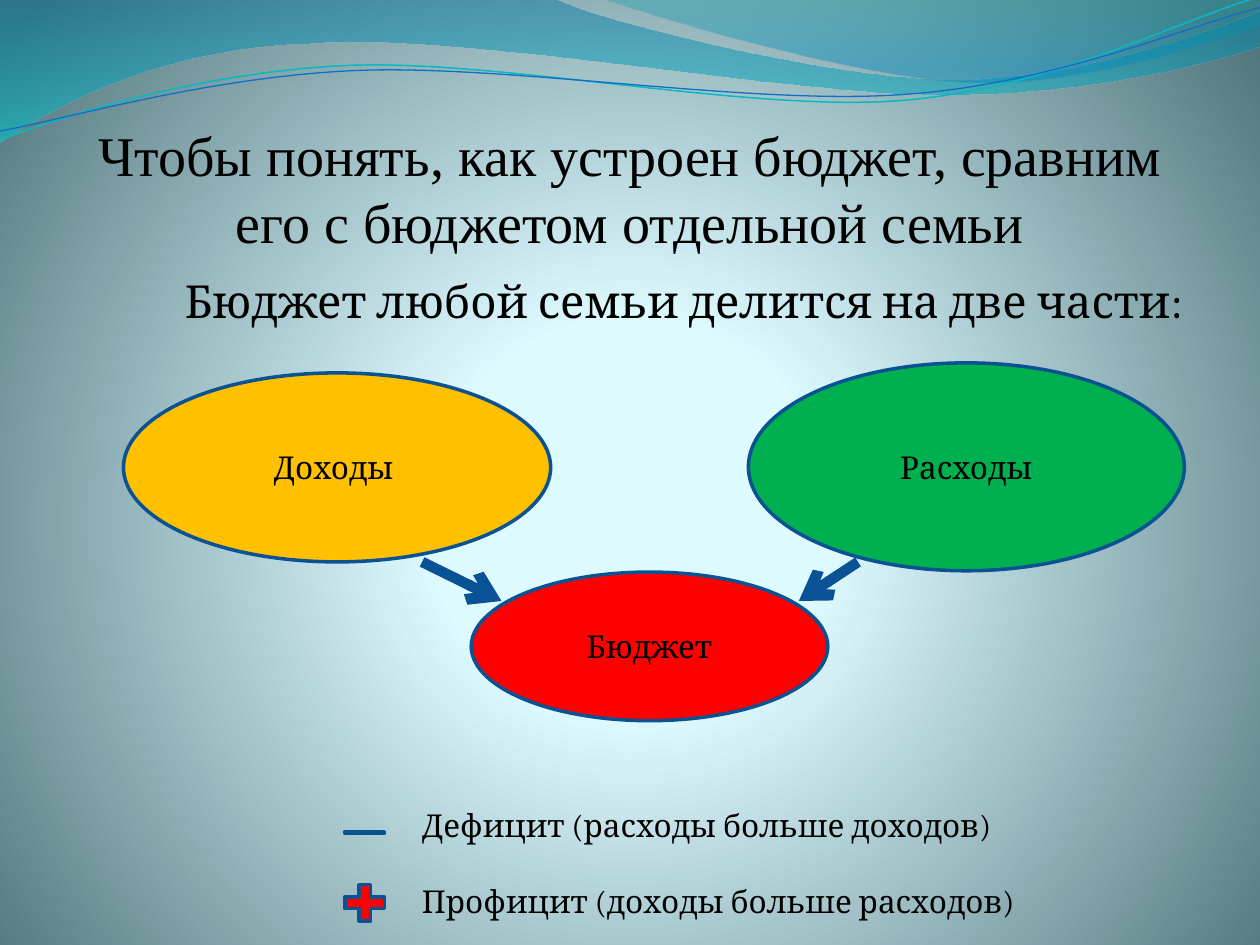
from lxml import etree
from pptx import Presentation
from pptx.dml.color import RGBColor
from pptx.enum.shapes import MSO_CONNECTOR, MSO_SHAPE
from pptx.enum.text import MSO_ANCHOR, PP_ALIGN
from pptx.oxml import parse_xml
from pptx.oxml.ns import qn
from pptx.util import Inches, Pt

OVAL, MINUS, PLUS = MSO_SHAPE.OVAL, MSO_SHAPE.MATH_MINUS, MSO_SHAPE.MATH_PLUS
LINE = MSO_CONNECTOR.STRAIGHT
LEFT, CENTER = PP_ALIGN.LEFT, PP_ALIGN.CENTER
TOP, MIDDLE, BOTTOM = MSO_ANCHOR.TOP, MSO_ANCHOR.MIDDLE, MSO_ANCHOR.BOTTOM
NS = "http://schemas.openxmlformats.org/drawingml/2006/main"

THEME = {
    "ink": "000000", "edge": "0B5292", "arrow": "095295",
    "gold": "FFC000", "green": "00B050", "red": "FF0000",
    "head": "Times New Roman", "body": "Cambria",
    "title": 32, "lead": 26, "text": 18,
}

TITLE = "Чтобы понять, как устроен бюджет, сравним его с бюджетом отдельной семьи"
LEAD = "Бюджет любой семьи делится на две части:"
LEGEND = ["Дефицит (расходы больше доходов)", "Профицит (доходы больше расходов)"]

SHAPES = [
    (OVAL, "Доходы ", "gold", (0.98, 2.96, 3.39, 1.5)),
    (OVAL, "Расходы", "green", (5.94, 2.88, 3.46, 1.65)),
    (OVAL, "Бюджет", "red", (3.74, 4.54, 2.83, 1.18)),
    (MINUS, "", "green", (2.68, 6.58, 0.43, 0.05)),
    (PLUS, "", "red", (2.68, 6.97, 0.43, 0.39)),
]
ARROWS = [(3.35, 4.46, 3.98, 4.77), (6.81, 4.46, 6.34, 4.77)]

BACK = [(0, "DEFBFF", 100), (25, "DDFAFF", 100), (100, "52767C", 100)]
GLOW = '<a:path path="circle"><a:fillToRect l="50000" t="55000" r="50000" b="45000"/></a:path>'
DOWN = '<a:lin ang="5400000" scaled="0"/>'

WAVES = [
    ([(0, 0), (4.4, -0.01), (4.76, 0.17, 6.64, 0.63, 7.58, 0.63),
      (8.53, 0.63, 9.58, 0.26, 10, 0.09), (10.01, 0.36),
      (9.83, 0.44, 8.7, 0.76, 7.46, 0.75), (6.22, 0.75, 3.82, 0.28, 2.57, 0.34),
      (1.29, 0.36, 0.46, 0.83, -0.01, 1.13), (0, 0)],
     [(0, "0074A1", 45), (100, "00C6CF", 55)]),
    ([(4.79, -0.01), (5.09, 0.11, 6.82, 0.62, 7.69, 0.65),
      (8.56, 0.69, 9.61, 0.32, 10, 0.21), (10, 0), (4.79, -0.01)],
     [(0, "00A1A9", 30), (80, "008BBF", 45)]),
]
CURVES = [
    ([(0, 1.11), (0.48, 0.93, 1.58, 0.57, 2.77, 0.52),
      (3.95, 0.47, 5.93, 0.89, 7.13, 0.8), (8.33, 0.71, 9.38, 0.15, 9.98, -0.02)],
     "0AB8BF", 0.85),
    ([(0, 1.04), (0.47, 0.96, 1.64, 0.61, 2.83, 0.56),
      (4.03, 0.51, 5.97, 0.84, 7.17, 0.75), (8.36, 0.67, 9.41, 0.21, 10, 0.06)],
     "0F6FC6", 0.75),
]


def rgb(name):
    return RGBColor.from_string(THEME.get(name, name))


def blend(stops, way):
    marks = "".join(
        f'<a:gs pos="{at * 1000}"><a:srgbClr val="{hue}">'
        f'<a:alpha val="{alpha * 1000}"/></a:srgbClr></a:gs>'
        for at, hue, alpha in stops)
    return parse_xml(f'<a:gradFill xmlns:a="{NS}" rotWithShape="1">'
                     f"<a:gsLst>{marks}</a:gsLst>{way}</a:gradFill>")


def paint(fill, root, stops, way):
    fill.gradient()
    old = next(root.iter(qn("a:gradFill")))
    old.getparent().replace(old, blend(stops, way))


def draw(slide, steps, close):
    ends = [(Inches(step[-2]), Inches(step[-1])) for step in steps]
    pen = slide.shapes.build_freeform(*ends[0])
    pen.add_line_segments(ends[1:], close=close)
    shape = pen.convert_to_shape()
    shape.shadow.inherit = False
    legs = list(shape.element.iter(qn("a:lnTo")))
    for leg, step in zip(legs, steps[1:]):
        if len(step) == 6:
            leg.tag = qn("a:cubicBezTo")
            for i, (x, y) in enumerate((step[:2], step[2:4])):
                spot = etree.Element(qn("a:pt"), x=str(Inches(x) - shape.left),
                                     y=str(Inches(y) - shape.top))
                leg.insert(i, spot)
    return shape


def stroke(line, hue, width):
    line.color.rgb = rgb(hue)
    line.width = Pt(width)


def write(shape, lines, size, face="body", align=LEFT, anchor=TOP, gap=0, indent=0):
    frame = shape.text_frame
    frame.text = "\n".join(lines)
    frame.word_wrap = True
    frame.vertical_anchor = anchor
    for i, para in enumerate(frame.paragraphs):
        para.alignment = align
        para.space_before = Pt(gap if i else 0)
        if indent:
            props = para._p.get_or_add_pPr()
            props.set("marL", str(Inches(indent)))
            props.set("indent", "0")
        for run in para.runs:
            run.font.name = THEME[face]
            run.font.size = Pt(THEME[size])
            run.font.color.rgb = rgb("ink")
    return frame


def place(shape, box):
    shape.left, shape.top, shape.width, shape.height = map(Inches, box)


def main():
    deck = Presentation()
    deck.slide_width, deck.slide_height = Inches(10), Inches(7.5)
    slide = deck.slides.add_slide(deck.slide_layouts[5])
    shapes = slide.shapes
    paint(slide.background.fill, slide.element, BACK, GLOW)

    for steps, stops in WAVES:
        wave = draw(slide, steps, True)
        paint(wave.fill, wave.element, stops, DOWN)
        wave.line.fill.background()
    for steps, hue, width in CURVES:
        curve = draw(slide, steps, False)
        curve.fill.background()
        stroke(curve.line, hue, width)

    title = shapes.title
    place(title, (0.5, 0.77, 9, 1.25))
    frame = write(title, [TITLE], "title", "head", CENTER, BOTTOM)
    frame.margin_left = frame.margin_right = frame.margin_bottom = 0
    frame.margin_top = Inches(0.05)
    title.element.getparent().append(title.element)

    lead = shapes.add_textbox(*map(Inches, (0.5, 2.12, 9, 5.18)))
    write(lead, [LEAD], "lead", indent=0.87)

    for kind, text, hue, box in SHAPES:
        shape = shapes.add_shape(kind, *map(Inches, box))
        shape.shadow.inherit = False
        shape.fill.solid()
        shape.fill.fore_color.rgb = rgb(hue)
        stroke(shape.line, "edge", 2)
        if text:
            write(shape, [text], "text", align=CENTER, anchor=MIDDLE)

    for ends in ARROWS:
        arrow = shapes.add_connector(LINE, *map(Inches, ends))
        stroke(arrow.line, "arrow", 6)
        props = arrow.element.spPr
        etree.SubElement(props.find(qn("a:ln")), qn("a:tailEnd"), type="arrow")
        etree.SubElement(props, qn("a:effectLst"))

    legend = shapes.add_textbox(*map(Inches, (1.22, 6.35, 7.95, 1.01)))
    write(legend, LEGEND, "text", gap=21.6, indent=2.03)
    deck.save("out.pptx")


if __name__ == "__main__":
    main()
